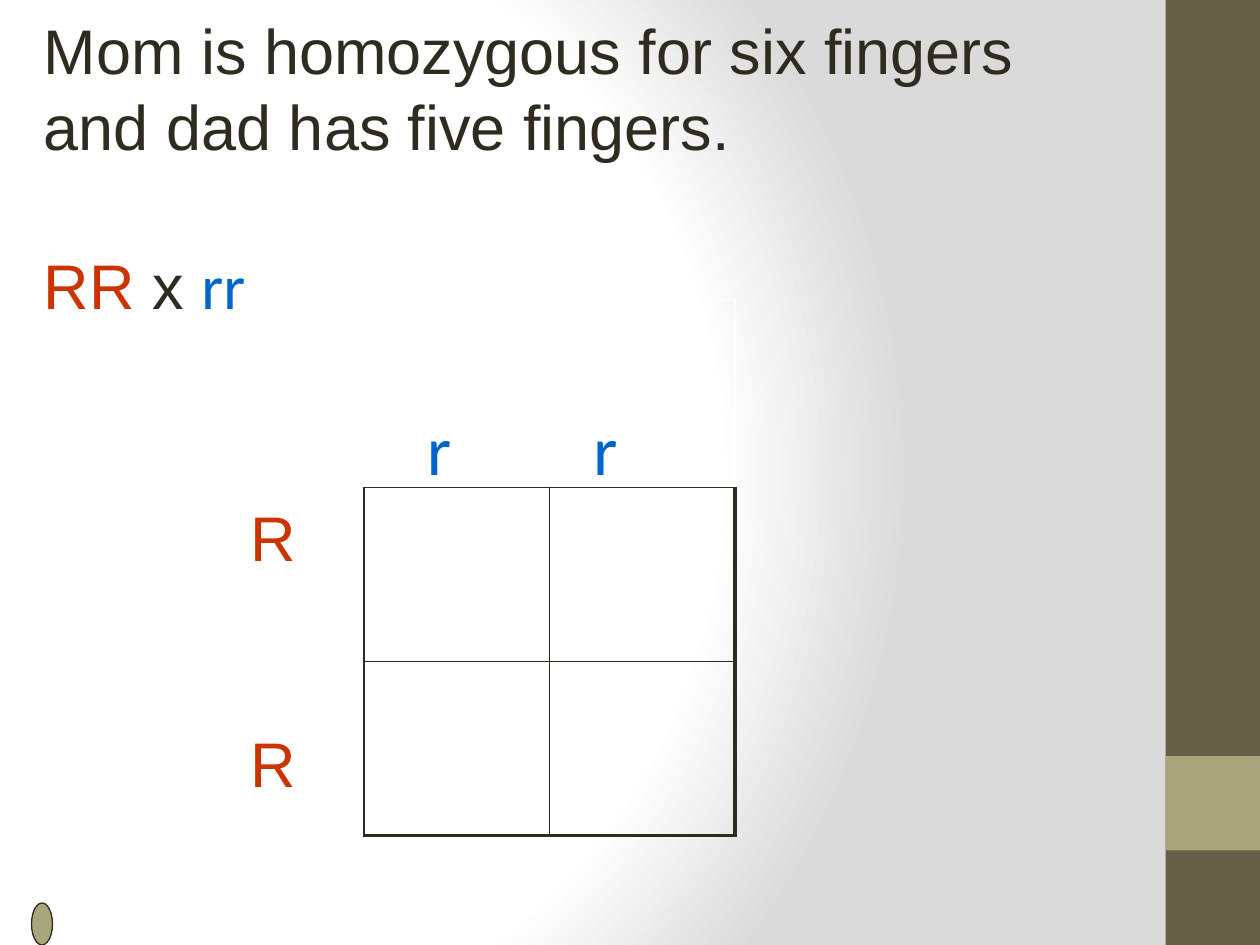
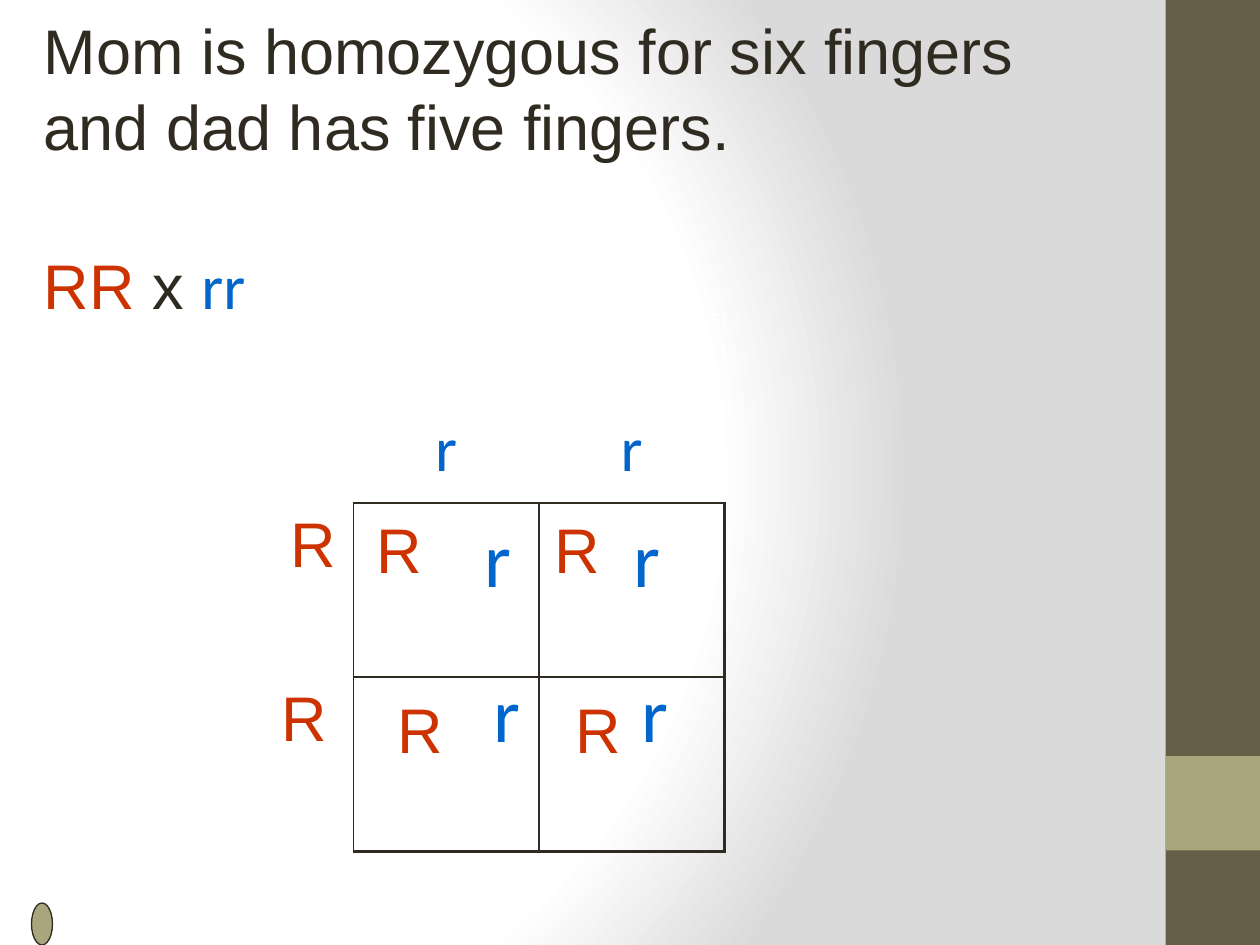
from lxml.etree import SubElement
from pptx import Presentation
from pptx.dml.color import RGBColor
from pptx.enum.shapes import MSO_SHAPE
from pptx.enum.text import MSO_ANCHOR, PP_ALIGN
from pptx.oxml import parse_xml
from pptx.oxml.ns import nsdecls, qn
from pptx.util import Pt

COLORS = {
    "ink": "2F2B20",
    "mom": "CC3300",
    "dad": "0066CC",
    "band": "675E47",
    "accent": "A9A57C",
    "white": "FFFFFF",
    "shade": "DADADA",
}
MOM = {"size": 36, "font": "Arial", "color": "mom"}
DAD = {"size": 36, "font": "Calibri", "color": "dad"}
INK = {"size": 36, "font": "Arial", "color": "ink"}
COLUMN_WIDTH = 106
ROW_HEIGHTS = (107.5, 99.5, 99.5)


def rgb(name):
    return RGBColor.from_string(COLORS[name])


def add_run(p, text, size=36, font="Arial", color="ink"):
    r = p.add_run()
    r.text = text
    r.font.size = Pt(size)
    r.font.name = font
    r.font.color.rgb = rgb(color)


def add_text(s, box, paragraphs, gap=0, inset=7.2, second_align=None):
    sp = s.shapes.add_textbox(*map(Pt, box))
    tf = sp.text_frame
    tf.word_wrap = True
    tf.margin_left = Pt(inset)
    for i, runs in enumerate(paragraphs):
        p = tf.paragraphs[0] if i == 0 else tf.add_paragraph()
        if i:
            p.space_before = Pt(gap)
            p.alignment = second_align
        for text, style in runs:
            add_run(p, text, **style)
    return tf


def add_pair(s, box, letter, style, inset, tab):
    tf = add_text(s, box, [[(f"{letter}\t{letter}", style)]], inset=inset)
    tabs = SubElement(tf.paragraphs[0]._p.get_or_add_pPr(), qn("a:tabLst"))
    SubElement(tabs, qn("a:tab"), pos=str(Pt(tab)), algn="l")


def add_plain_shape(s, kind, box, fill, line=None):
    sp = s.shapes.add_shape(kind, *map(Pt, box))
    sp.shadow.inherit = False
    sp.fill.solid()
    sp.fill.fore_color.rgb = rgb(fill)
    if line:
        sp.line.color.rgb = rgb(line)
        sp.line.width = Pt(0.75)
    else:
        sp.line.fill.background()


def set_background(s):
    stops = "".join(
        f'<a:gs pos="{pos}"><a:srgbClr val="{COLORS[name]}"/></a:gs>'
        for pos, name in ((0, "white"), (75000, "white"), (100000, "shade"))
    )
    bg = parse_xml(
        f'<p:bg {nsdecls("p", "a")}><p:bgPr><a:gradFill rotWithShape="1">'
        f'<a:gsLst>{stops}</a:gsLst><a:path path="circle">'
        '<a:fillToRect l="20000" t="50000" r="100000" b="50000"/></a:path>'
        '</a:gradFill><a:effectLst/></p:bgPr></p:bg>'
    )
    s._element.cSld.insert(0, bg)


def set_borders(cell, row, col):
    def in_square(r, c):
        return r in (1, 2) and c in (1, 2)

    neighbours = {
        "lnL": (row, col - 1),
        "lnR": (row, col + 1),
        "lnT": (row - 1, col),
        "lnB": (row + 1, col),
    }
    tc_pr = cell._tc.get_or_add_tcPr()
    for i, (tag, (r, c)) in enumerate(neighbours.items()):
        dark = in_square(row, col) or in_square(r, c)
        width = 2.25 if dark and 3 in (r, c) else 1
        color = COLORS["ink" if dark else "white"]
        tc_pr.insert(i, parse_xml(
            f'<a:{tag} {nsdecls("a")} w="{Pt(width)}"><a:solidFill>'
            f'<a:srgbClr val="{color}"/></a:solidFill></a:{tag}>'
        ))


def add_square(s, left, top):
    frame = s.shapes.add_table(
        3, 3, Pt(left), Pt(top), Pt(3 * COLUMN_WIDTH), Pt(sum(ROW_HEIGHTS))
    )
    table = frame.table
    table.first_row = table.horz_banding = False
    for column in table.columns:
        column.width = Pt(COLUMN_WIDTH)
    for row, height in enumerate(ROW_HEIGHTS):
        table.rows[row].height = Pt(height)
        for col in range(3):
            cell = table.cell(row, col)
            cell.fill.background()
            set_borders(cell, row, col)
    return table


def fill_cell(cell, text, style, align, top, right=7.2):
    cell.vertical_anchor = MSO_ANCHOR.TOP
    cell.margin_top = Pt(top)
    cell.margin_right = Pt(right)
    p = cell.text_frame.paragraphs[0]
    p.alignment = align
    add_run(p, text, **style)


def add_cross(s):
    sentence = "Mom is homozygous for six fingers and dad has five fingers."
    cross = [("RR", MOM), (" x ", INK), ("rr", DAD)]
    add_text(s, (18, 3, 636, 225), [[(sentence, INK)], cross], gap=48)


def new_slide(prs):
    s = prs.slides.add_slide(prs.slide_layouts[6])
    set_background(s)
    add_plain_shape(s, MSO_SHAPE.RECTANGLE, (666, 0, 54, 540), "band")
    add_plain_shape(s, MSO_SHAPE.RECTANGLE, (666, 432, 54, 54), "accent")
    add_plain_shape(s, MSO_SHAPE.OVAL, (18, 516, 12, 24), "accent", "ink")
    return s


def build_empty_square(prs):
    s = new_slide(prs)
    add_square(s, 102, 171)
    add_cross(s)
    add_text(s, (136, 281.5, 60, 225), [[("R", MOM)]] * 2, gap=86)
    add_pair(s, (210, 228, 188, 99), "r", {**DAD, "size": 40}, 34, 95)


def build_filled_square(prs):
    s = new_slide(prs)
    table = add_square(s, 96, 180)
    for col in (1, 2):
        fill_cell(table.cell(0, col), "r", DAD, PP_ALIGN.CENTER, 55)
    for row, right in ((1, 10), (2, 15)):
        fill_cell(table.cell(row, 0), "R", MOM, PP_ALIGN.RIGHT, 4, right)
    for left, top in ((198, 288), (210, 391)):
        add_pair(s, (left, top, 198, 103), "R", MOM, 17, 102)
    for left in (270, 355):
        add_text(s, (left, 288, 39, 176), [[("r", {**DAD, "size": 44})]] * 2,
                 gap=36, second_align=PP_ALIGN.CENTER)
    add_cross(s)


def main():
    prs = Presentation()
    prs.slide_width, prs.slide_height = Pt(720), Pt(540)
    build_empty_square(prs)
    build_filled_square(prs)
    prs.save("out.pptx")


if __name__ == "__main__":
    main()
